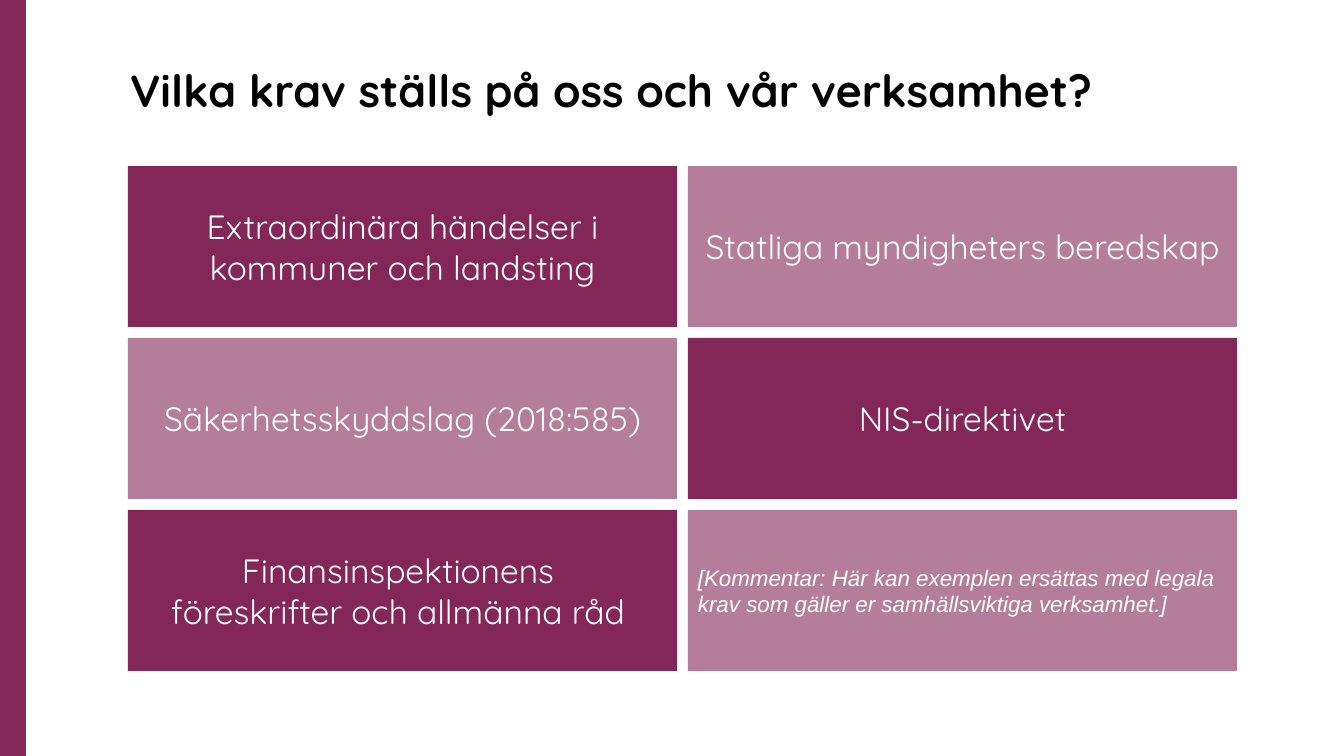
import pptx
import pptx.dml.color
import pptx.enum.shapes
import pptx.enum.text
import pptx.util

SLIDE_W, SLIDE_H = 1344, 756
EMU_PER_PX = 12192000 / SLIDE_W
COLORS = {"plum": "822757", "mauve": "B47D9A", "white": "FFFFFF", "black": "000000"}
REQUIREMENTS = [
    "Extraordinära händelser i kommuner och landsting",
    "Statliga myndigheters beredskap",
    "Säkerhetsskyddslag (2018:585)",
    "NIS-direktivet",
    "Finansinspektionens \vföreskrifter och allmänna råd ",
]
COMMENT = ("[Kommentar: Här kan exemplen ersättas med legala krav "
           "som gäller er samhällsviktiga verksamhet.]")


def px(length):
    return pptx.util.Emu(round(length * EMU_PER_PX))


def rgb(name):
    return pptx.dml.color.RGBColor.from_string(COLORS[name])


def write(frame, text, size, color, font="Quicksand", bold=False, italic=False):
    frame.word_wrap = True
    paragraph = frame.paragraphs[0]
    paragraph.text = text
    for run in paragraph.runs:
        run.font.name = font
        run.font.size = pptx.util.Pt(size)
        run.font.bold = bold
        run.font.italic = italic
        run.font.color.rgb = rgb(color)
    return paragraph


def add_block(slide, left, top, width, height, color):
    block = slide.shapes.add_shape(
        pptx.enum.shapes.MSO_SHAPE.RECTANGLE, px(left), px(top), px(width), px(height))
    block.shadow.inherit = False
    block.fill.solid()
    block.fill.fore_color.rgb = rgb(color)
    block.line.fill.background()
    return block


def add_heading(slide, left, top, width, height):
    heading = slide.shapes.title
    heading.left, heading.top = px(left), px(top)
    heading.width, heading.height = px(width), px(height)
    heading.text_frame.vertical_anchor = pptx.enum.text.MSO_ANCHOR.TOP
    paragraph = write(heading.text_frame, "Vilka krav ställs på oss och vår verksamhet?",
                      32, "black", bold=True)
    paragraph.alignment = pptx.enum.text.PP_ALIGN.LEFT
    paragraph.line_spacing = 0.9


def add_requirements(slide, left, top, width, height):
    columns, rows, gap = 2, 3, 11
    tile_w = (width - gap * (columns - 1)) / columns
    tile_h = (height - gap * (rows - 1)) / rows
    for index, text in enumerate(REQUIREMENTS + [COMMENT]):
        row, column = divmod(index, columns)
        # Dark and light tiles alternate like a chessboard
        color = "mauve" if (row + column) % 2 else "plum"
        tile = add_block(slide, left + column * (tile_w + gap),
                         top + row * (tile_h + gap), tile_w, tile_h, color)
        frame = tile.text_frame
        frame.vertical_anchor = pptx.enum.text.MSO_ANCHOR.MIDDLE
        if text == COMMENT:
            paragraph = write(frame, text, 16, "white", font="Arial", italic=True)
            paragraph.alignment = pptx.enum.text.PP_ALIGN.LEFT
        else:
            paragraph = write(frame, text, 24, "white")
            paragraph.alignment = pptx.enum.text.PP_ALIGN.CENTER


def main():
    deck = pptx.Presentation()
    deck.slide_width, deck.slide_height = px(SLIDE_W), px(SLIDE_H)
    slide = deck.slides.add_slide(deck.slide_layouts.get_by_name("Title Only"))
    # Side band
    add_block(slide, 0, 0, 26, SLIDE_H, "plum")
    # Title
    add_heading(slide, 120, 64, 1014, 107)
    # Grid of requirements
    add_requirements(slide, 128, 166, 1109, 505)
    deck.save("out.pptx")


if __name__ == "__main__":
    main()
